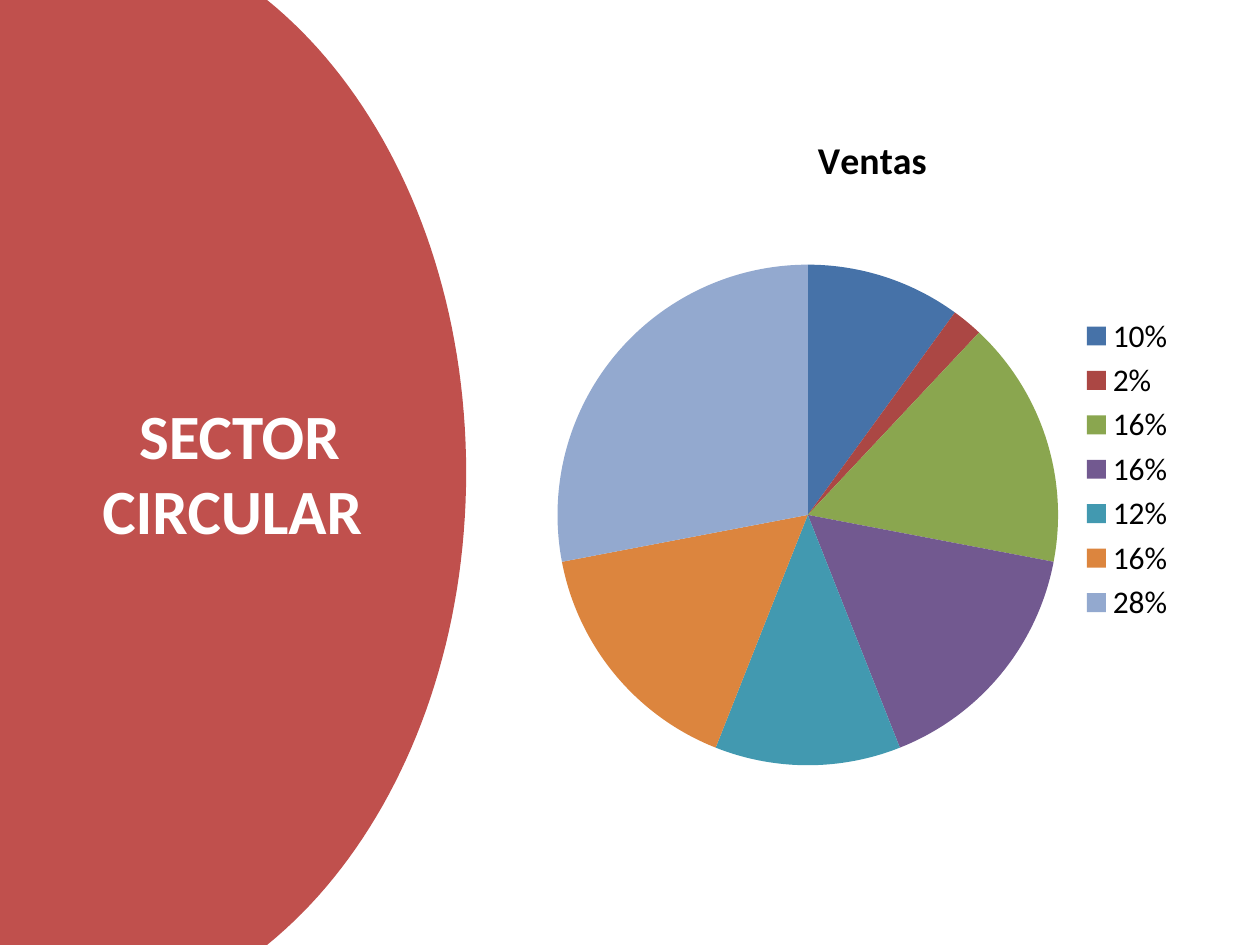
"""Build a slide with a round red title panel and a pie chart of sales."""
from dataclasses import dataclass

from lxml.etree import SubElement as Sub
from pptx import Presentation
from pptx.chart.data import CategoryChartData as Data
from pptx.dml.color import RGBColor as RGB
from pptx.enum.chart import XL_CHART_TYPE as Kind, XL_LEGEND_POSITION as Side
from pptx.enum.text import MSO_ANCHOR as Anchor, PP_ALIGN as Align
from pptx.oxml.ns import qn
from pptx.util import Inches, Pt


@dataclass(frozen=True)
class Theme:
    font: str = "Calibri"
    panel: str = "C0504D"
    light: str = "FFFFFF"
    dark: str = "000000"
    head: int = 36
    title: float = 21.6
    body: int = 18
    slices: tuple = ("4672A8", "AB4744", "8AA64F", "725990",
                     "4299B0", "DC853E", "93A9CF")


def style(font, size, color, bold=False):
    font.name, font.size, font.bold = theme.font, Pt(size), bold
    font.color.rgb = RGB.from_string(color)


def place(node, index, **spots):
    for old in node.findall(qn("c:layout")):
        node.remove(old)
    layout = node.makeelement(qn("c:layout"))
    node.insert(index, layout)
    manual = Sub(layout, qn("c:manualLayout"))
    if "w" in spots:
        Sub(manual, qn("c:layoutTarget")).set("val", "inner")
    for axis in "xy":
        Sub(manual, qn(f"c:{axis}Mode")).set("val", "edge")
    for key, share in spots.items():
        Sub(manual, qn(f"c:{key}")).set("val", str(share))


theme = Theme()
deck = Presentation()
deck.slide_width, deck.slide_height = Inches(10), Inches(7.5)
high = deck.slide_height
slide = deck.slides.add_slide(deck.slide_layouts[6])

curves = [
    ((2.12, 0), (3.07, 0.77), (3.7, 2.16), (3.7, 3.75)),
    ((3.7, 3.75), (3.7, 5.34), (3.07, 6.73), (2.12, 7.5)),
]
steps = 40
edge = []
for curve in curves:
    for step in range(steps + 1):
        t = step / steps
        weights = ((1 - t) ** 3, 3 * t * (1 - t) ** 2, 3 * t ** 2 * (1 - t), t ** 3)
        edge.append(tuple(Inches(sum(weight * spot[axis] for weight, spot in zip(weights, curve)))
                          for axis in (0, 1)))
pen = slide.shapes.build_freeform(0, 0)
pen.add_line_segments(edge + [(0, high)], close=True)
panel = pen.convert_to_shape()
panel.shadow.inherit = False
panel.fill.solid()
panel.fill.fore_color.rgb = RGB.from_string(theme.panel)
panel.line.fill.background()

box = slide.shapes.add_textbox(Inches(0.69), Inches(0.7), Inches(2.42), Inches(6.09))
frame = box.text_frame
frame.word_wrap = True
frame.vertical_anchor = Anchor.MIDDLE
frame.text = "SECTOR CIRCULAR "
line = frame.paragraphs[0]
line.alignment = Align.CENTER
style(line.runs[0].font, theme.head, theme.light, True)

sales = (10, 2, 16, 16, 12, 16, 28)
data = Data()
data.categories = [f"{sale}%" for sale in sales]
data.add_series("Ventas", sales)
chart = slide.shapes.add_chart(Kind.PIE, Inches(4.27), Inches(0.7),
                               Inches(5.16), Inches(6.05), data).chart
style(chart.font, theme.body, theme.dark)
chart.has_title = True
name = chart.chart_title.text_frame
name.text = "Ventas"
style(name.paragraphs[0].runs[0].font, theme.title, theme.dark, True)
chart.has_legend = True
chart.legend.position = Side.RIGHT
chart.legend.include_in_layout = False

plot = chart.plots[0]
plot.vary_by_categories = True
for spot, color in enumerate(theme.slices):
    fill = plot.series[0].points[spot].format.fill
    fill.solid()
    fill.fore_color.rgb = RGB.from_string(color)

root = chart.element
place(root.find(".//" + qn("c:plotArea")), 0, x=0.03, y=0.23, w=0.77, h=0.66)
place(root.find(".//" + qn("c:title")), 1, x=0.42, y=0.05)

deck.save("out.pptx")
